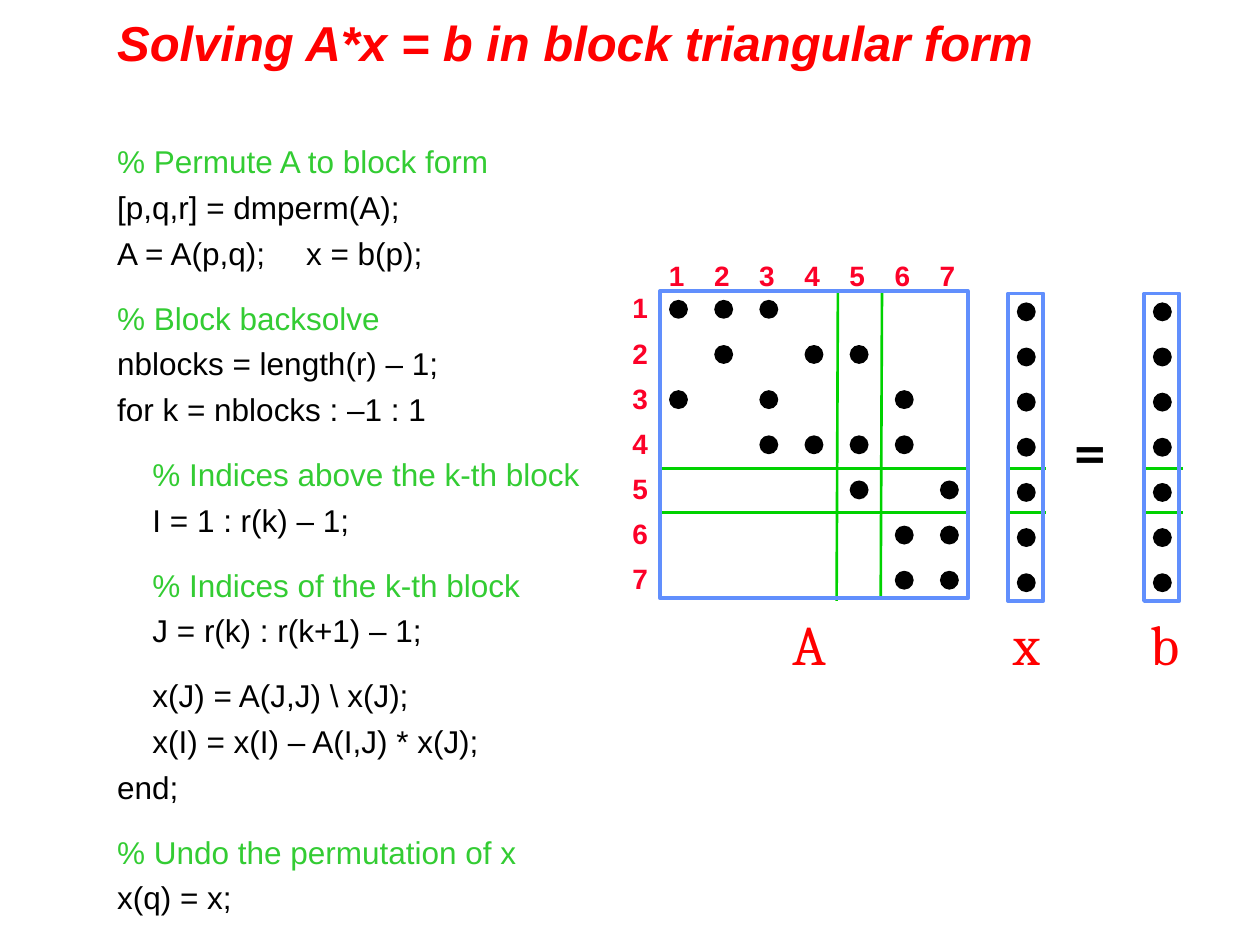
import pptx
import pptx.util
import pptx.dml.color
import pptx.enum.shapes
import pptx.enum.text
import pptx.oxml.ns
import lxml.etree

Inches, Pt = pptx.util.Inches, pptx.util.Pt
RGB = pptx.dml.color.RGBColor.from_string
qn = pptx.oxml.ns.qn
Kind = pptx.enum.shapes.MSO_SHAPE
Align = pptx.enum.text.PP_ALIGN
Fit = pptx.enum.text.MSO_AUTO_SIZE
colors = {"title": "FF0000", "note": "33CC33", "code": "000000", "dot": "000000",
          "cut": "00D200", "frame": "618FFD", "index": "FC0128"}

deck = pptx.Presentation()
deck.slide_width, deck.slide_height = Inches(10), Inches(7.5)
slide = deck.slides.add_slide(deck.slide_layouts[1])
shapes = slide.shapes


def write(para, text, size, color, font="Arial", bold=False):
    run = para.add_run()
    run.text = text
    run.font.size, run.font.name, run.font.bold = Pt(size), font, bold
    run.font.color.rgb = RGB(colors[color])
    return run


def label(left, top, width, height, text, size, color, font="Arial", bold=False, align=Align.LEFT):
    box = shapes.add_textbox(Inches(left), Inches(top), Inches(width), Inches(height))
    box.text_frame.word_wrap = False
    para = box.text_frame.paragraphs[0]
    para.alignment = align
    write(para, text, size, color, font, bold)


title = shapes.title
title.left, title.top, title.width, title.height = Inches(0.83), 0, Inches(8.19), Inches(0.67)
title.text_frame.auto_size = Fit.NONE
title.text_frame.vertical_anchor = pptx.enum.text.MSO_ANCHOR.MIDDLE
head = title.text_frame.paragraphs[0]
head.alignment = Align.LEFT
write(head, "Solving A*x = b in block triangular form", 28, "title", bold=True).font.italic = True

body = slide.placeholders[1]
body.left, body.top, body.width, body.height = Inches(0.83), Inches(1.08), Inches(4.42), Inches(6.42)
frame = body.text_frame
frame.auto_size = Fit.NONE
parts = [
    [(0, "% Permute A to block form"), (0, "[p,q,r] = dmperm(A);"), (0, "A = A(p,q);\tx = b(p);")],
    [(0, "% Block backsolve"), (0, "nblocks = length(r) – 1;"), (0, "for k = nblocks : –1 : 1")],
    [(1, "% Indices above the k-th block"), (1, "I = 1 : r(k) – 1;")],
    [(1, "% Indices of the k-th block"), (1, "J = r(k) : r(k+1) – 1;")],
    [(1, "x(J) = A(J,J) \\ x(J);"), (1, "x(I) = x(I) – A(I,J) * x(J);"), (0, "end;")],
    [(0, "% Undo the permutation of x"), (0, "x(q) = x;")],
]
for p, part in enumerate(parts):
    for n, (depth, text) in enumerate(part):
        first = p == n == 0
        para = frame.paragraphs[0] if first else frame.add_paragraph()
        para.space_before = Pt(15.5 if p and n == 0 else 4.5)
        props = para._p.get_or_add_pPr()
        props.set("marL", str(Inches(0.28 * depth)))
        props.set("indent", "0")
        lxml.etree.SubElement(props, qn("a:buNone"))
        if "\t" in text:
            tabs = lxml.etree.SubElement(props, qn("a:tabLst"))
            lxml.etree.SubElement(tabs, qn("a:tab"), pos=str(Inches(1.39)), algn="l")
        write(para, text, 18, "note" if text.startswith("%") else "code")

cuts = [(left, y, right, y) for left, right in [(9.08, 9.39), (7.99, 8.3), (5.24, 7.69)]
        for y in (3.72, 4.07)]
cuts += [(7, 2.31, 6.99, 4.76), (6.65, 2.31, 6.64, 4.77)]
for ends in cuts:
    cut = shapes.add_connector(pptx.enum.shapes.MSO_CONNECTOR.STRAIGHT, *map(Inches, ends))
    cut.line.color.rgb, cut.line.width = RGB(colors["cut"]), Pt(1.5)
    lxml.etree.SubElement(cut._element.spPr, qn("a:effectLst"))

step = 2.15 / 6
whole = [[1]] * 7
filled = [[1, 2, 3], [2, 4, 5], [1, 3, 6], [3, 4, 5, 6], [5, 7], [6, 7], [6, 7]]
for left, top, width, rows in [(5.24, 2.31, 2.44, filled), (8, 2.33, 0.28, whole), (9.08, 2.33, 0.28, whole)]:
    rect = shapes.add_shape(Kind.RECTANGLE, Inches(left), Inches(top), Inches(width), Inches(2.44))
    rect.shadow.inherit = False
    rect.fill.background()
    rect.line.color.rgb, rect.line.width = RGB(colors["frame"]), Pt(2.25)
    for r, cols in enumerate(rows):
        for c in cols:
            dot = shapes.add_shape(Kind.OVAL, Inches(left + 0.07 + (c - 1) * step),
                                   Inches(top + 0.07 + r * step), Inches(0.15), Inches(0.15))
            dot.shadow.inherit = False
            dot.fill.solid()
            dot.fill.fore_color.rgb = RGB(colors["dot"])
            dot.line.fill.background()

for n in range(7):
    label(5.21 + n * step, 2, 0.32, 0.37, str(n + 1), 16, "index", bold=True)
    label(4.92, 2.26 + n * step, 0.32, 0.37, str(n + 1), 16, "index", bold=True, align=Align.RIGHT)

label(8.42, 3.25, 0.45, 0.63, "=", 32, "code", "Cambria", True)
for left, width, name in [(6.19, 0.52, "A"), (7.94, 0.42, "x"), (9.03, 0.42, "b")]:
    label(left, 4.79, width, 0.63, name, 32, "title", "Cambria")

deck.save("out.pptx")
